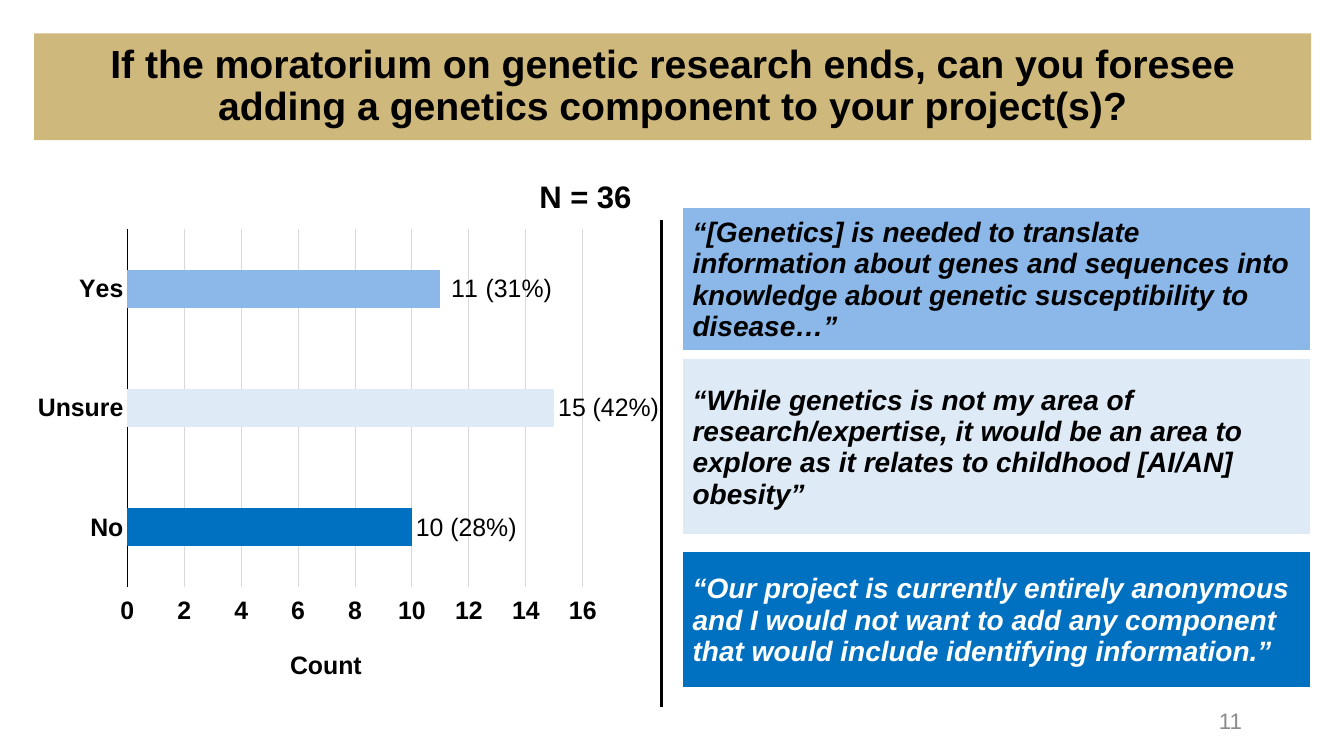
from lxml import etree
from pptx import Presentation, oxml
from pptx import util as u
from pptx.chart import data as chart_data
from pptx.dml import color
from pptx.enum import chart as charts, shapes, text
from pptx.oxml import ns

FONT = "Arial"
BLACK, WHITE = "000000", "FFFFFF"
GOLD, SKY, PALE, BLUE = "CFB87C", "8BB8E8", "DEEBF7", "0070C0"

QUOTES = [  # text, fill, text colour, top and height in cm
    ("“[Genetics] is needed to translate information about genes and sequences into "
     "knowledge about genetic susceptibility to disease…”", SKY, BLACK, 5.23, 3.43),
    ("“While genetics is not my area of research/expertise, it would be an area to "
     "explore as it relates to childhood [AI/AN] obesity”", PALE, BLACK, 9.04, 4.47),
    ("“Our project is currently entirely anonymous and I would not want to add any "
     "component that would include identifying information.”", BLUE, WHITE, 13.89, 3.48),
]
ANSWERS = [  # category, count, label, bar colour; bottom to top
    ("No", 10, "10 (28%)", BLUE),
    ("Unsure", 15, "15 (42%)", PALE),
    ("Yes", 11, " 11 (31%)", SKY),
]


def rgb(value):
    return color.RGBColor.from_string(value)


def paint(fill, value):
    fill.solid()
    fill.fore_color.rgb = rgb(value)


def style_font(font, size, value=BLACK, bold=True, italic=False):
    font.name, font.size = FONT, u.Pt(size)
    font.bold, font.italic = bold, italic
    font.color.rgb = rgb(value)


def add_run(paragraph, words, size, **look):
    run = paragraph.add_run()
    run.text = words
    style_font(run.font, size, **look)


def cm_box(*lengths):
    return [u.Cm(length) for length in lengths]


def add_title(slide, box):
    title = slide.shapes.title
    title.left, title.top, title.width, title.height = cm_box(*box)
    paint(title.fill, GOLD)
    frame = title.text_frame
    frame.word_wrap = True
    frame.vertical_anchor = text.MSO_ANCHOR.MIDDLE
    paragraph = frame.paragraphs[0]
    paragraph.alignment = text.PP_ALIGN.CENTER
    paragraph.line_spacing = 0.9
    add_run(paragraph, "If the moratorium on genetic research ends, can you foresee "
            "adding a genetics component to your project(s)?", 28)


def add_text(slide, box, words, size, alignment, anchor, **look):
    frame = slide.shapes.add_textbox(*cm_box(*box)).text_frame
    frame.word_wrap = True
    frame.vertical_anchor = anchor
    paragraph = frame.paragraphs[0]
    paragraph.alignment = alignment
    add_run(paragraph, words, size, **look)


def add_divider(slide, x, top, bottom):
    line = slide.shapes.add_connector(
        shapes.MSO_CONNECTOR.STRAIGHT, *cm_box(x, top, x, bottom))
    line.line.color.rgb = rgb(BLACK)
    line.line.width = u.Pt(2.25)
    etree.SubElement(line._element.spPr, ns.qn("a:effectLst"))


def add_borders(cell):
    properties = cell._tc.get_or_add_tcPr()
    for index, (side, points) in enumerate([("L", 1), ("R", 1), ("T", 1), ("B", 3)]):
        border = oxml.parse_xml(
            f'<a:ln{side} {ns.nsdecls("a")} w="{u.Pt(points)}"><a:solidFill>'
            f'<a:srgbClr val="{WHITE}"/></a:solidFill></a:ln{side}>')
        properties.insert(index, border)


def add_quote(slide, box, words, fill, ink):
    """Place one quotation as a table of a single cell."""
    table = slide.shapes.add_table(1, 1, *cm_box(*box)).table
    table.first_row = table.horz_banding = False
    cell = table.cell(0, 0)
    paint(cell.fill, fill)
    add_borders(cell)
    cell.vertical_anchor = text.MSO_ANCHOR.MIDDLE
    add_run(cell.text_frame.paragraphs[0], words, 20, value=ink, italic=True)


def set_layout(element, index, inner=False, **fractions):
    """Position a chart part by fractions of the chart's size."""
    for old in element.findall(ns.qn("c:layout")):
        element.remove(old)
    layout = etree.Element(ns.qn("c:layout"))
    manual = etree.SubElement(layout, ns.qn("c:manualLayout"))
    settings = {"layoutTarget": "inner"} if inner else {}
    settings.update(xMode="edge", yMode="edge", **fractions)
    for name, value in settings.items():
        etree.SubElement(manual, ns.qn(f"c:{name}")).set("val", str(value))
    element.insert(index, layout)


def style_axes(chart):
    categories, counts = chart.category_axis, chart.value_axis
    for axis in (categories, counts):
        style_font(axis.tick_labels.font, 18)
        axis.major_tick_mark = axis.minor_tick_mark = charts.XL_TICK_MARK.NONE
    categories.format.line.color.rgb = rgb(BLACK)
    categories.format.line.width = u.Pt(0.75)
    counts.minimum_scale, counts.maximum_scale, counts.major_unit = 0, 16, 2
    counts.major_tick_mark = charts.XL_TICK_MARK.OUTSIDE
    counts.format.line.fill.background()
    counts.has_major_gridlines = True
    gridline = counts.major_gridlines.format.line
    gridline.color.rgb = rgb("D9D9D9")
    gridline.width = u.Pt(0.75)
    counts.has_title = True
    title = counts.axis_title
    add_run(title.text_frame.paragraphs[0], "Count", 18)
    set_layout(title._element, 1, x=0.41, y=0.89)


def add_answer_chart(slide, box):
    names, values, labels, colours = zip(*ANSWERS)
    data = chart_data.CategoryChartData()
    data.categories = names
    data.add_series("Series 1", values)
    chart = slide.shapes.add_chart(
        charts.XL_CHART_TYPE.BAR_CLUSTERED, *cm_box(*box), data).chart
    chart.has_legend = chart.has_title = False
    style_font(chart.font, 18)
    plot = chart.plots[0]
    plot.gap_width = 219
    plot.vary_by_categories = False
    for index, (label, colour) in enumerate(zip(labels, colours)):
        point = plot.series[0].points[index]
        paint(point.format.fill, colour)
        add_run(point.data_label.text_frame.paragraphs[0], label, 18, bold=False)
        point.data_label.position = charts.XL_LABEL_POSITION.OUTSIDE_END
    style_axes(chart)
    plot_area = chart._chartSpace.chart.plotArea
    set_layout(plot_area, 0, inner=True, x=0.154, y=0.02, w=0.737, h=0.75)


def main():
    presentation = Presentation()
    presentation.slide_width, presentation.slide_height = cm_box(33.87, 19.05)
    slide = presentation.slides.add_slide(presentation.slide_layouts[5])
    add_title(slide, (0.86, 0.84, 32.18, 2.69))
    add_divider(slide, 16.66, 5.54, 17.81)
    add_text(slide, (12.95, 4.45, 3.61, 1.09), "N = 36", 22.2,
             text.PP_ALIGN.CENTER, text.MSO_ANCHOR.BOTTOM)
    for words, fill, ink, top, height in QUOTES:
        add_quote(slide, (17.2, top, 15.82, height), words, fill, ink)
    add_answer_chart(slide, (0.81, 5.54, 15.8, 12.01))
    add_text(slide, (23.93, 17.65, 7.62, 1.02), "11", 16,
             text.PP_ALIGN.RIGHT, text.MSO_ANCHOR.MIDDLE, value="8C8C8C", bold=False)
    presentation.save("out.pptx")


if __name__ == "__main__":
    main()
